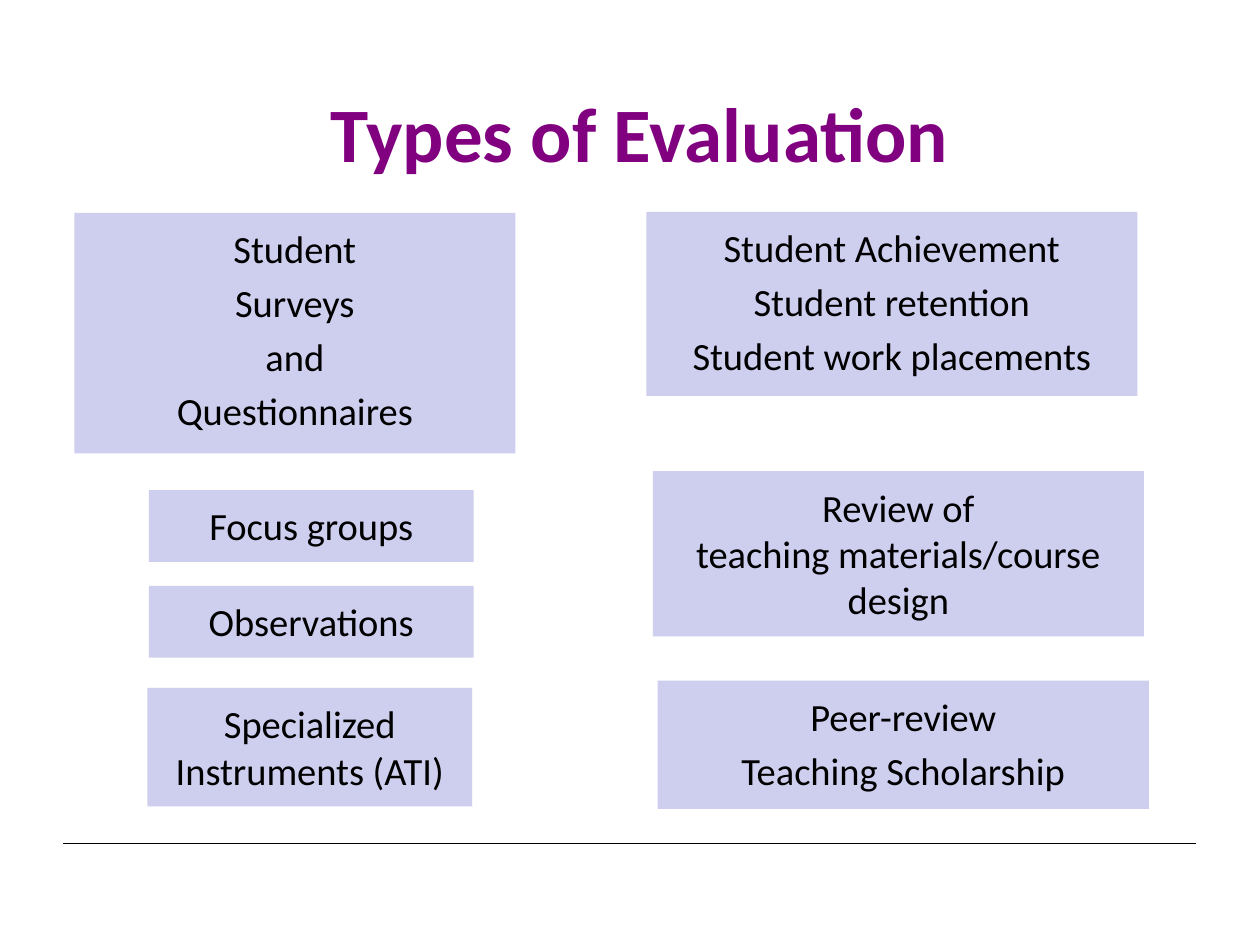
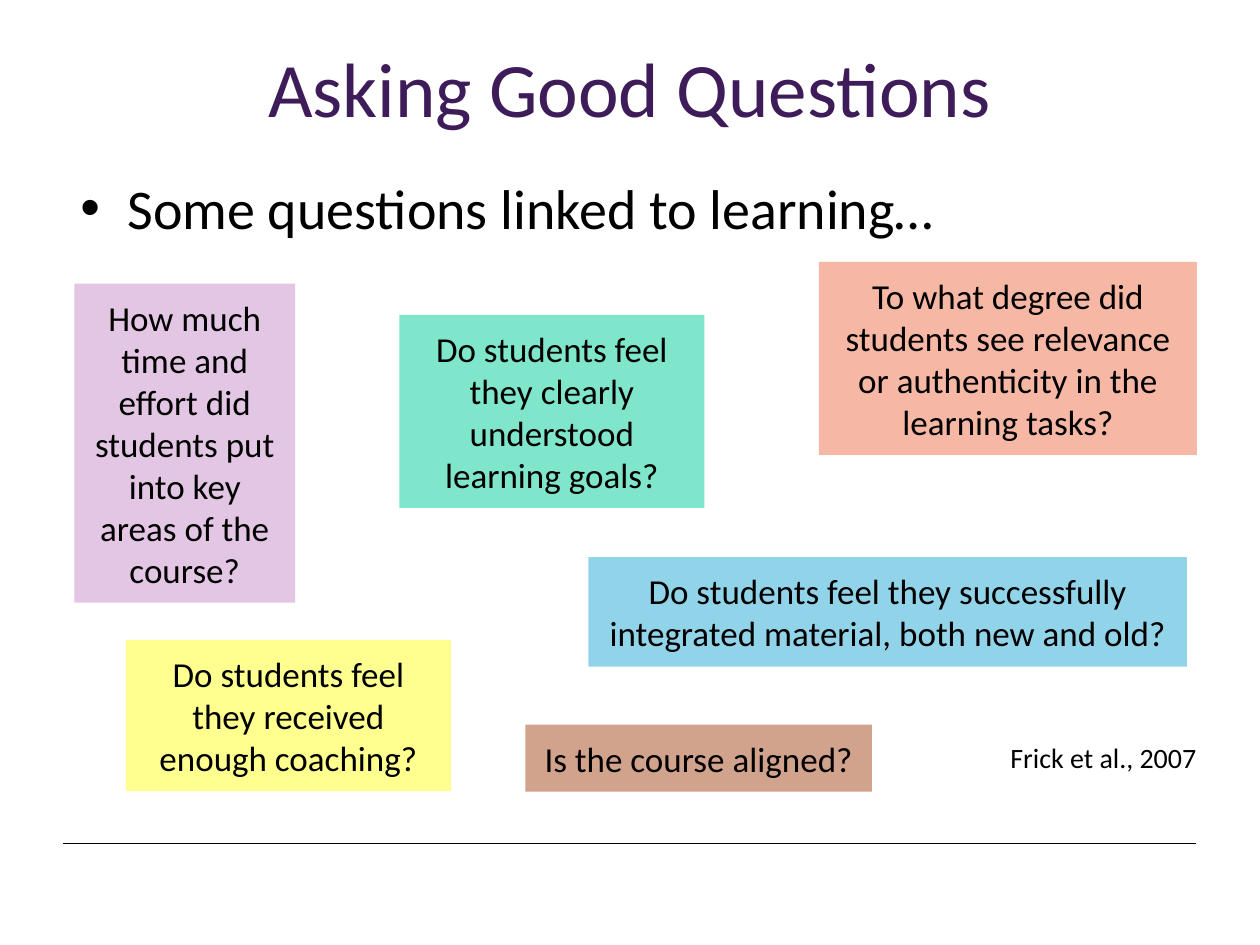
from lxml import etree
from pptx import Presentation
from pptx.dml.color import RGBColor
from pptx.enum.shapes import MSO_CONNECTOR, MSO_SHAPE
from pptx.enum.text import MSO_ANCHOR, PP_ALIGN
from pptx.oxml.ns import qn
from pptx.util import Cm, Pt

RECT = MSO_SHAPE.RECTANGLE
LINE = MSO_CONNECTOR.STRAIGHT
TOP, MIDDLE = MSO_ANCHOR.TOP, MSO_ANCHOR.MIDDLE
LEFT, CENTER = PP_ALIGN.LEFT, PP_ALIGN.CENTER
FONT = "Calibri"
BLACK = "000000"
LILAC = "CECEEF"


def hue(code):
    return RGBColor.from_string(code)


def write(shape, lines, size, ink=BLACK, align=LEFT, anchor=TOP, bold=False):
    frame = shape.text_frame
    frame.word_wrap = True
    frame.vertical_anchor = anchor
    frame.text = "\n".join(lines)
    for i, para in enumerate(frame.paragraphs):
        para.alignment = align
        if i:
            para.space_before = Pt(size * 0.2)
        for run in para.runs:
            run.font.name = FONT
            run.font.size = Pt(size)
            run.font.bold = bold
            run.font.color.rgb = hue(ink)
    return frame


titles = [
    ("Types of Evaluation", 1.47, 1.07, "800080", True),
    ("Asking Good Questions", 1.27, 0.15, "3E1B59", False),
]

types = [
    (1.5, 4.29, 8.89, 4.85, ["Student", "Surveys", "and", "Questionnaires"]),
    (13.16, 9.5, 9.9, 3.33, ["Review of\vteaching materials/course design"]),
    (3, 11.81, 6.55, 1.45, ["Observations"]),
    (3, 9.88, 6.55, 1.45, ["Focus groups"]),
    (13.03, 4.27, 9.9, 3.71,
     ["Student Achievement", "Student retention", "Student work placements"]),
    (13.26, 13.72, 9.9, 2.59, ["Peer-review", "Teaching Scholarship"]),
    (2.97, 13.87, 6.55, 2.39, ["Specialized Instruments (ATI)"]),
]

asks = [
    (1.5, 5.72, 4.45, 6.43, "E2C6E4", 100,
     "How much time and effort did students put into key areas of the course?"),
    (16.51, 5.28, 7.62, 3.89, "F27C5C", 55,
     "To what degree did students see relevance or authenticity in the learning tasks?"),
    (8.05, 6.35, 6.15, 3.89, "00CC99", 50,
     "Do students feel they clearly understood learning goals?"),
    (2.54, 12.9, 6.55, 3.05, "FFFF66", 73,
     "Do students feel they received enough coaching?"),
    (11.86, 11.23, 12.07, 2.21, "0099CC", 43,
     "Do students feel they successfully integrated material, both new and old?"),
    (10.59, 14.61, 6.99, 1.35, "993300", 45, "Is the course aligned?"),
]

deck = Presentation()
deck.slide_width, deck.slide_height = Cm(25.4), Cm(19.05)

for text, x, y, ink, bold in titles:
    slide = deck.slides.add_slide(deck.slide_layouts[6])
    rule = slide.shapes.add_connector(LINE, Cm(1.27), Cm(17), Cm(24.1), Cm(17))
    rule.line.color.rgb = hue(BLACK)
    rule.line.width = Pt(0.75)
    etree.SubElement(rule._element.spPr, qn("a:effectLst"))
    title = slide.shapes.add_textbox(Cm(x), Cm(y), Cm(22.86), Cm(3.18))
    write(title, [text], 44, ink, CENTER, MIDDLE, bold)

first, second = deck.slides

body = second.shapes.add_textbox(Cm(1.37), Cm(3.38), Cm(22.86), Cm(1.8))
frame = write(body, ["Some questions linked to learning…"], 32)
props = frame.paragraphs[0]._p.get_or_add_pPr()
props.set("marL", str(Cm(0.95)))
props.set("indent", str(-Cm(0.95)))
etree.SubElement(props, qn("a:buFont")).set("typeface", "Arial")
etree.SubElement(props, qn("a:buChar")).set("char", "•")

source = second.shapes.add_textbox(Cm(20.12), Cm(14.81), Cm(4.45), Cm(0.94))
write(source, ["Frick et al., 2007"], 16)

cards = [(first, *place, LILAC, 100, lines, 22) for *place, lines in types]
cards += [(second, *place, fill, alpha, [ask], 20)
          for *place, fill, alpha, ask in asks]

for slide, x, y, w, h, fill, alpha, lines, size in cards:
    card = slide.shapes.add_shape(RECT, Cm(x), Cm(y), Cm(w), Cm(h))
    card.shadow.inherit = False
    card.line.fill.background()
    card.fill.solid()
    card.fill.fore_color.rgb = hue(fill)
    if alpha < 100:
        tint = card._element.spPr.find(qn("a:solidFill"))[0]
        etree.SubElement(tint, qn("a:alpha")).set("val", str(alpha * 1000))
    frame = write(card, lines, size, align=CENTER)
    frame.margin_left = frame.margin_right = Cm(0.25)
    frame.margin_top = frame.margin_bottom = Cm(0.25)

deck.save("out.pptx")
